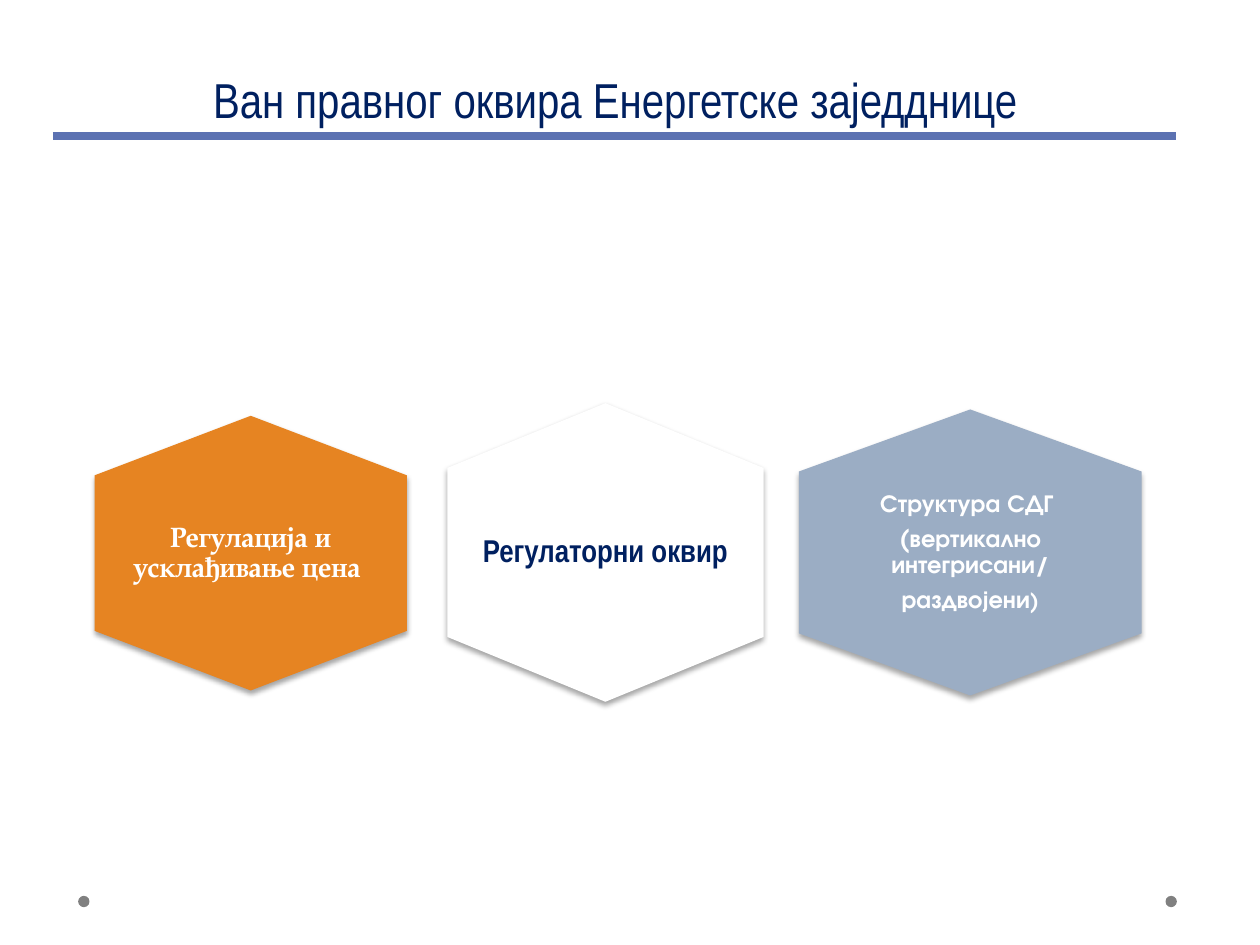
import pptx
import pptx.dml.color
import pptx.enum.shapes
import pptx.enum.text
import pptx.oxml
import pptx.oxml.ns
import pptx.util

CELL = pptx.util.Inches(0.1)
COLUMNS, ROWS = 100, 75
SHOULDER = 0.217
NAVY, WHITE = "002060", "FFFFFF"
CENTER = pptx.enum.text.PP_ALIGN.CENTER
ANCHOR = pptx.enum.text.MSO_ANCHOR
SHADOW = (
    f'<a:effectLst {pptx.oxml.ns.nsdecls("a")}>'
    '<a:outerShdw blurRad="39370" dist="22860" dir="5400000" rotWithShape="0">'
    '<a:srgbClr val="000000"><a:alpha val="35000"/></a:srgbClr>'
    '</a:outerShdw></a:effectLst>'
)
NO_EFFECT = f'<a:effectLst {pptx.oxml.ns.nsdecls("a")}/>'


def grid(*cells):
    return [round(cell * CELL) for cell in cells]


def color(value):
    return pptx.dml.color.RGBColor.from_string(value)


def apply(target, values):
    for name, value in values.items():
        setattr(target, name, value)


def fill_plain(shape, value):
    shape.fill.solid()
    shape.fill.fore_color.rgb = color(value)
    shape.line.fill.background()


def set_effect(shape, xml):
    properties = shape._element.spPr
    for old in properties.findall(pptx.oxml.ns.qn("a:effectLst")):
        properties.remove(old)
    properties.append(pptx.oxml.parse_xml(xml))


def write(frame, paragraphs, font, tint, layout):
    for index, spans in enumerate(paragraphs):
        para = frame.paragraphs[0] if index == 0 else frame.add_paragraph()
        apply(para, {"alignment": CENTER, **layout})
        for words, size in spans:
            span = para.add_run()
            span.text = words
            apply(span.font, {"size": pptx.util.Pt(size), **font})
            span.font.color.rgb = color(tint)


def add_title(page, words):
    box = page.shapes.add_textbox(*grid(3.5, 0, 91.5, 10.7))
    apply(box.text_frame, {"word_wrap": True, "vertical_anchor": ANCHOR.BOTTOM})
    write(box.text_frame, [[(words, 28)]], {"name": "Arial Narrow"}, NAVY,
          {"line_spacing": pptx.util.Pt(58)})


def add_rule(page):
    rule = page.shapes.add_connector(
        pptx.enum.shapes.MSO_CONNECTOR.STRAIGHT, *grid(4.2, 10.8, 93.3, 10.8))
    rule.line.color.rgb = color("5C72B2")
    rule.line.width = pptx.util.Pt(4.5)
    set_effect(rule, NO_EFFECT)


def add_dot(page, left):
    dot = page.shapes.add_shape(
        pptx.enum.shapes.MSO_SHAPE.OVAL, *grid(left, 71.1, 0.9, 0.9))
    dot.shadow.inherit = False
    fill_plain(dot, "808080")


def add_hexagon(group, area, fill, insets, font_name, tint, paragraphs):
    left, top, width, height = area
    middle, right = left + width / 2, left + width
    upper, lower = top + height * SHOULDER, top + height * (1 - SHOULDER)
    corners = [(right, upper), (right, lower), (middle, top + height),
               (left, lower), (left, upper)]
    outline = group.shapes.build_freeform(*grid(middle, top))
    outline.add_line_segments([grid(*corner) for corner in corners])
    hexagon = outline.convert_to_shape()
    fill_plain(hexagon, fill)
    set_effect(hexagon, SHADOW)
    side, end = grid(*insets)
    apply(hexagon.text_frame, {
        "word_wrap": True, "vertical_anchor": ANCHOR.MIDDLE,
        "margin_left": side, "margin_right": side,
        "margin_top": end, "margin_bottom": end})
    size = paragraphs[0][0][1]
    write(hexagon.text_frame, paragraphs, {"name": font_name, "bold": True}, tint,
          {"line_spacing": 0.9, "space_after": pptx.util.Pt(size * 0.35)})


def main():
    deck = pptx.Presentation()
    deck.slide_width, deck.slide_height = grid(COLUMNS, ROWS)
    page = deck.slides.add_slide(deck.slide_layouts[6])
    for left in (92.5, 6.2):
        add_dot(page, left)
    add_title(page, "Ван правног оквира Енергетске заједднице ")
    add_rule(page)
    group = page.shapes.add_group_shape()
    add_hexagon(group, (7.5, 33, 24.8, 21.8), "E68422", (1.9, 2.2),
                "TeX Gyre Pagella", WHITE,
                [[("Регулација и усклађивање цена ", 16)]])
    add_hexagon(group, (35.5, 32, 25.1, 23.7), WHITE, (2.6, 2.9),
                "Arial Narrow", NAVY, [[("Регулаторни оквир ", 18)]])
    add_hexagon(group, (63.4, 32.5, 27.2, 22.7), "9BADC4", (2.3, 2.6),
                "TeX Gyre Adventor", WHITE,
                [[("Структура СДГ ", 14)],
                 [("(вертикално интегрисани/", 14)],
                 [("раздвојени", 14), (")", 12)]])
    deck.save("out.pptx")


if __name__ == "__main__":
    main()
